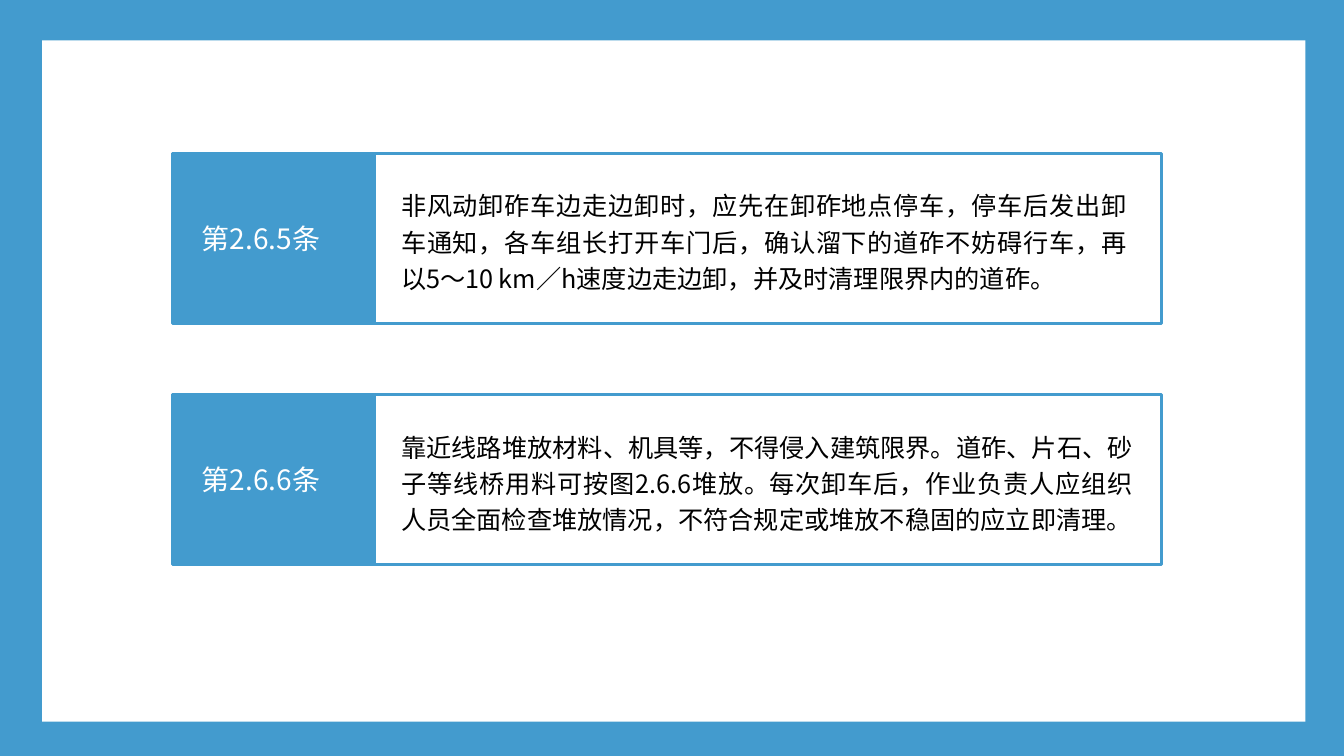
from lxml.etree import SubElement
from pptx import Presentation
from pptx.dml.color import RGBColor
from pptx.enum.shapes import MSO_SHAPE as Preset
from pptx.enum.text import MSO_AUTO_SIZE as AutoSize, PP_ALIGN as Align
from pptx.oxml.ns import qn
from pptx.util import Pt

COLORS = {"blue": "439BCE", "white": "FFFFFF", "black": "000000"}
FONT = "Noto Sans CJK SC"
BLANK_LAYOUT = 6

CARD_LEFT, CARD_TOP = 123.1, 109.4
CARD_WIDTH, CARD_HEIGHT = 706.3, 121.7
CARD_PITCH = 172.3
LABEL_WIDTH = 145.4

# Each article: label, wording, width of the wording
ARTICLES = [
    ("第2.6.5条　",
     "非风动卸砟车边走边卸时，应先在卸砟地点停车，停车后发出卸车通知，"
     "各车组长打开车门后，确认溜下的道砟不妨碍行车，"
     "再以5～10 km／h速度边走边卸，并及时清理限界内的道砟。", 532.8),
    ("第2.6.6条　",
     "靠近线路堆放材料、机具等，不得侵入建筑限界。"
     "道砟、片石、砂子等线桥用料可按图2.6.6堆放。"
     "每次卸车后，作业负责人应组织人员全面检查堆放情况，"
     "不符合规定或堆放不稳固的应立即清理。", 537.1),
]


class SlideBuilder:
    def __init__(self, slide, font):
        self.slide = slide
        self.font = font

    def color(self, name):
        return RGBColor.from_string(COLORS[name])

    def background(self, color):
        fill = self.slide.background.fill
        fill.solid()
        fill.fore_color.rgb = self.color(color)

    def rectangle(self, left, top, width, height, fill=None, line=None):
        box = self.slide.shapes.add_shape(
            Preset.RECTANGLE, Pt(left), Pt(top), Pt(width), Pt(height))
        box.shadow.inherit = False
        if fill:
            box.fill.solid()
            box.fill.fore_color.rgb = self.color(fill)
        else:
            box.fill.background()
        if line:
            box.line.color.rgb = self.color(line)
            box.line.width = Pt(2)
        else:
            box.line.fill.background()

    def text(self, wording, left, top, width, height, size, color, align,
             spacing=1.0):
        box = self.slide.shapes.add_textbox(
            Pt(left), Pt(top), Pt(width), Pt(height))
        frame = box.text_frame
        frame.word_wrap = True
        frame.auto_size = AutoSize.SHAPE_TO_FIT_TEXT
        para = frame.paragraphs[0]
        para.text = wording
        para.alignment = align
        para.line_spacing = spacing
        para.font.name = self.font
        para.font.size = Pt(size)
        para.font.color.rgb = self.color(color)
        # Chinese characters take their typeface from a:ea
        defaults = para._p.pPr.find(qn("a:defRPr"))
        SubElement(defaults, qn("a:ea"), typeface=self.font)

    def article(self, top, label, wording, wording_width):
        """Draw an outlined card with a filled label on its left."""
        self.rectangle(CARD_LEFT, top, CARD_WIDTH, CARD_HEIGHT, line="blue")
        self.rectangle(CARD_LEFT, top, LABEL_WIDTH, CARD_HEIGHT, fill="blue")
        self.text(label, CARD_LEFT + 4.3, top + 45, 138.2, 31.7,
                  20, "white", Align.CENTER)
        self.text(wording, CARD_LEFT + 156.3, top + 19, wording_width, 83.5,
                  18, "black", Align.JUSTIFY, spacing=1.2)


def main():
    deck = Presentation()
    deck.slide_width, deck.slide_height = Pt(960), Pt(540)
    page = deck.slides.add_slide(deck.slide_layouts[BLANK_LAYOUT])
    builder = SlideBuilder(page, FONT)

    builder.background("blue")
    builder.rectangle(30.2, 28.8, 902.2, 486.7, fill="white")
    for index, article in enumerate(ARTICLES):
        builder.article(CARD_TOP + index * CARD_PITCH, *article)

    deck.save("out.pptx")


if __name__ == "__main__":
    main()
